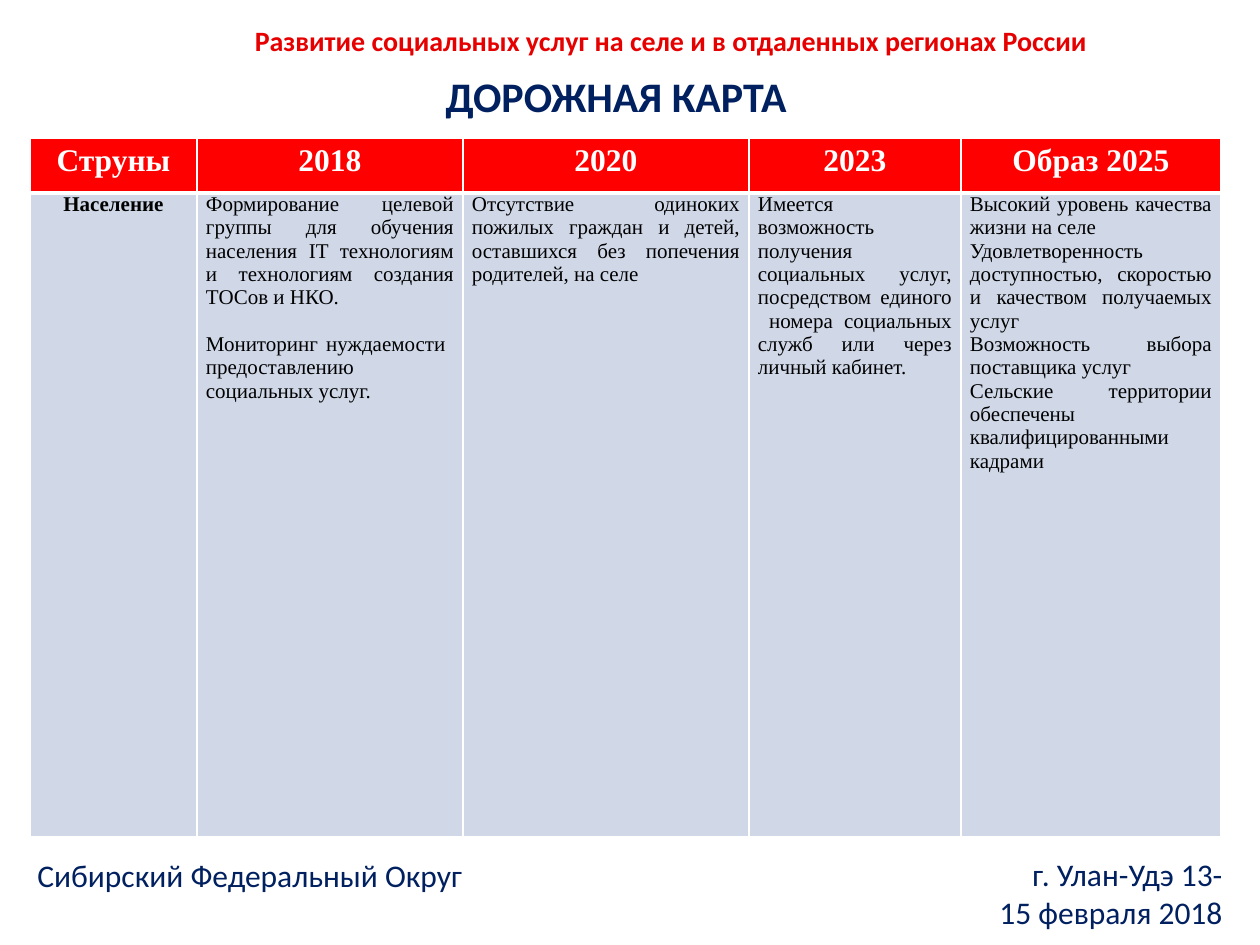
from lxml import etree
from pptx import Presentation
from pptx.dml.color import RGBColor
from pptx.enum.text import MSO_ANCHOR, MSO_AUTO_SIZE, PP_ALIGN
from pptx.oxml.ns import qn
from pptx.util import Emu, Pt

LEFT, CENTER, RIGHT, JUSTIFY = PP_ALIGN.LEFT, PP_ALIGN.CENTER, PP_ALIGN.RIGHT, PP_ALIGN.JUSTIFY
TOP, MIDDLE = MSO_ANCHOR.TOP, MSO_ANCHOR.MIDDLE
NO_AUTOFIT = MSO_AUTO_SIZE.NONE

PX = 914400 // 126
NAVY, RED, TITLE_RED = "002060", "FF0000", "E60000"
WHITE, BLACK, PALE_BLUE = "FFFFFF", "000000", "D0D8E8"

TITLE = "ДОРОЖНАЯ КАРТА"
TEXT_BOXES = [
    ("Развитие социальных услуг на селе и в отдаленных регионах России",
     (137, 16, 1068, 49), dict(size=16, color=TITLE_RED, bold=True, align=CENTER)),
    ("Сибирский Федеральный Округ",
     (25, 838, 600, 74), dict(size=18, color=NAVY, align=LEFT)),
    ("г. Улан-Удэ 13-\v15 февраля 2018",
     (935, 856, 300, 74), dict(size=18, color=NAVY, align=RIGHT)),
]

COLUMNS = [
    ("Струны", 167, ["Население"]),
    ("2018", 266, [
        "Формирование целевой группы для обучения населения IT технологиям "
        "и технологиям создания ТОСов и НКО.",
        "Мониторинг нуждаемости  предоставлению социальных услуг."]),
    ("2020", 286, [
        "Отсутствие одиноких пожилых граждан и детей, оставшихся без "
        "попечения родителей, на селе"]),
    ("2023", 212, [
        "Имеется возможность получения социальных услуг, посредством единого  "
        "номера социальных служб или через личный кабинет."]),
    ("Образ 2025", 260, [
        "Высокий уровень качества жизни на селе",
        "Удовлетворенность доступностью, скоростью и качеством получаемых услуг",
        "Возможность выбора поставщика услуг",
        "Сельские территории обеспечены квалифицированными кадрами"]),
]
TABLE_LEFT, TABLE_TOP = 30, 138
ROW_HEIGHTS = [55, 644]
PARAGRAPH_GAPS = {"2018": 13.3}


def px(*lengths):
    return [Emu(length * PX) for length in lengths]


def rgb(color):
    return RGBColor.from_string(color)


def write(text_frame, paragraphs, size, color, font="Calibri", bold=False,
          align=LEFT, line_spacing=None, gap=0):
    for index, text in enumerate(paragraphs):
        paragraph = text_frame.paragraphs[0] if index == 0 else text_frame.add_paragraph()
        paragraph.text = text
        paragraph.alignment = align
        paragraph.line_spacing = line_spacing
        paragraph.space_before = Pt(gap if index else 0)
        for run in paragraph.runs:
            run.font.name = font
            run.font.size = Pt(size)
            run.font.bold = bold
            run.font.color.rgb = rgb(color)


def place(shape, box, anchor):
    shape.left, shape.top, shape.width, shape.height = px(*box)
    shape.text_frame.word_wrap = True
    shape.text_frame.auto_size = NO_AUTOFIT
    shape.text_frame.vertical_anchor = anchor


def format_cell(cell, fill, **borders):
    properties = cell._tc.get_or_add_tcPr()
    for side in ("L", "R", "T", "B"):
        line = etree.SubElement(properties, qn(f"a:ln{side}"), w=str(Pt(borders.get(side, 1))))
        line_fill = etree.SubElement(line, qn("a:solidFill"))
        etree.SubElement(line_fill, qn("a:srgbClr"), val=WHITE)
    cell.fill.solid()
    cell.fill.fore_color.rgb = rgb(fill)
    cell.margin_left, cell.margin_right, cell.margin_top, cell.margin_bottom = px(9, 9, 0, 0)


def add_roadmap(slide):
    widths = [width for _, width, _ in COLUMNS]
    table = slide.shapes.add_table(
        len(ROW_HEIGHTS), len(COLUMNS),
        *px(TABLE_LEFT, TABLE_TOP, sum(widths), sum(ROW_HEIGHTS))).table
    for row, height in zip(table.rows, px(*ROW_HEIGHTS)):
        row.height = height
    for index, (heading, width, paragraphs) in enumerate(COLUMNS):
        table.columns[index].width = Emu(width * PX)
        header, body = table.cell(0, index), table.cell(1, index)
        format_cell(header, RED, B=3)
        format_cell(body, PALE_BLUE, T=3)
        write(header.text_frame, [heading], 18, WHITE, font="Times New Roman",
              bold=True, align=CENTER, line_spacing=1.15)
        is_label = index == 0
        write(body.text_frame, paragraphs, 12, BLACK, font="Times New Roman",
              bold=is_label, align=CENTER if is_label else JUSTIFY,
              gap=PARAGRAPH_GAPS.get(heading, 0))


def main():
    presentation = Presentation()
    presentation.slide_width, presentation.slide_height = px(1260, 945)
    slide = presentation.slides.add_slide(presentation.slide_layouts[5])
    title = slide.shapes.title
    place(title, (433, 64, 452, 63), TOP)
    write(title.text_frame, [TITLE], 24, NAVY, bold=True)
    for text, box, text_format in TEXT_BOXES:
        text_box = slide.shapes.add_textbox(*px(*box))
        place(text_box, box, MIDDLE)
        write(text_box.text_frame, [text], **text_format)
    add_roadmap(slide)
    presentation.save("out.pptx")


if __name__ == "__main__":
    main()
